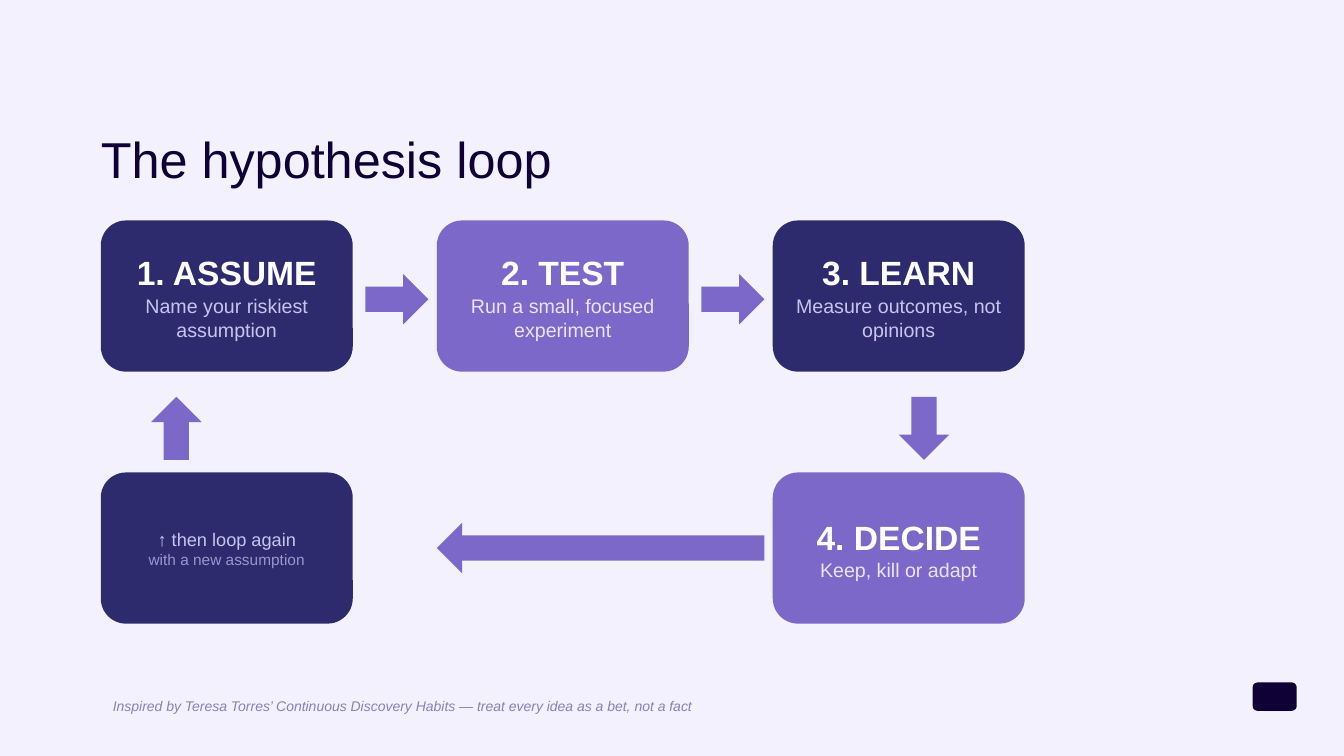
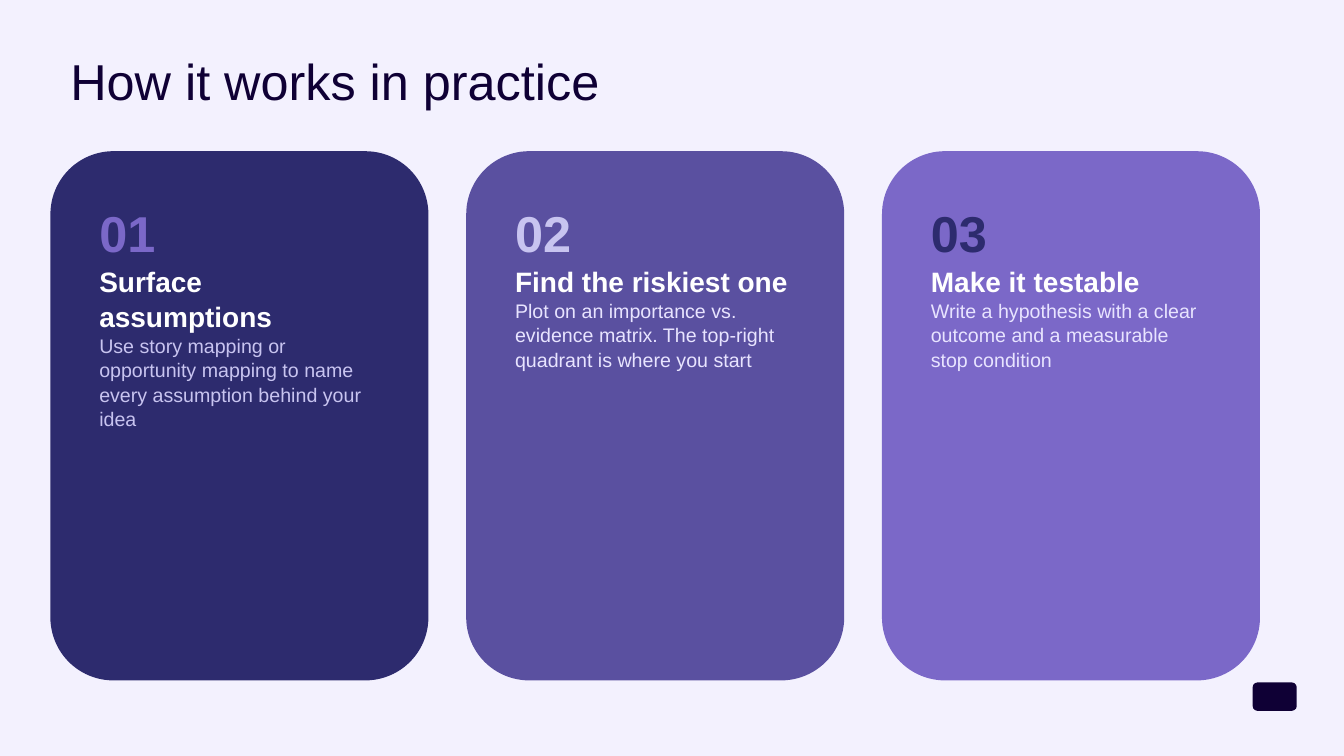
from pptx import Presentation
from pptx.dml.color import RGBColor
from pptx.enum.shapes import MSO_SHAPE
from pptx.enum.text import MSO_ANCHOR, PP_ALIGN
from pptx.util import Emu, Pt

PX = 9525
FONT = "Arial"
INK, PAPER, WHITE = "0F0035", "F3F1FE", "FFFFFF"
NAVY, INDIGO, VIOLET = "2D2B6E", "5A50A0", "7B68C8"
LILAC, PALE, MUTED, NOTE = "C8C4F0", "E8E4FF", "9B96D0", "8880B8"
LINE_SPACING = 1.04

# Loop steps: column, row, fill, then (text, size, colour, bold) lines
STEPS = [
    (0, 0, NAVY, [("1. ASSUME", 24, WHITE, True),
                  ("Name your riskiest assumption", 14, LILAC, False)]),
    (1, 0, VIOLET, [("2. TEST", 24, WHITE, True),
                    ("Run a small, focused experiment", 14, PALE, False)]),
    (2, 0, NAVY, [("3. LEARN", 24, WHITE, True),
                  ("Measure outcomes, not opinions", 14, LILAC, False)]),
    (2, 1, VIOLET, [("4. DECIDE", 24, WHITE, True),
                    ("Keep, kill or adapt", 14, PALE, False)]),
    (0, 1, NAVY, [("↑ then loop again", 13, LILAC, False),
                  ("with a new assumption", 11, MUTED, False)]),
]
STEP_LEFT, STEP_TOP, STEP_WIDTH, STEP_HEIGHT = 96, 210, 240, 144
STEP_PITCH_X, STEP_PITCH_Y = 320, 240
ARROWS = [
    (MSO_SHAPE.RIGHT_ARROW, 348, 261, 60, 48),
    (MSO_SHAPE.RIGHT_ARROW, 668, 261, 60, 48),
    (MSO_SHAPE.DOWN_ARROW, 856, 378, 48, 60),
    (MSO_SHAPE.LEFT_ARROW, 416, 498, 312, 48),
    (MSO_SHAPE.UP_ARROW, 144, 378, 48, 60),
]
SOURCE_NOTE = ("Inspired by Teresa Torres’ Continuous Discovery Habits"
               " — treat every idea as a bet, not a fact")

# Practice cards: fill, number colour, heading, body, body colour
CARDS = [
    (NAVY, VIOLET, "Surface assumptions",
     "Use story mapping or opportunity mapping to name every assumption behind your idea", LILAC),
    (INDIGO, LILAC, "Find the riskiest one",
     "Plot on an importance vs. evidence matrix. The top-right quadrant is where you start", PALE),
    (VIOLET, NAVY, "Make it testable",
     "Write a hypothesis with a clear outcome and a measurable stop condition", PALE),
]
CARD_LEFT, CARD_TOP, CARD_WIDTH, CARD_HEIGHT, CARD_PITCH = 48, 144, 360, 504, 396
CARD_INSET = 29


def px(length):
    return Emu(length * PX)


def colour(value):
    return RGBColor.from_string(value)


def write(shape, lines, align=PP_ALIGN.LEFT, anchor=MSO_ANCHOR.TOP, inset=None, italic=False):
    """Fill a shape with one paragraph for each (text, size, colour, bold) line."""
    frame = shape.text_frame
    frame.word_wrap = True
    frame.vertical_anchor = anchor
    if inset is not None:
        frame.margin_left = frame.margin_right = px(inset)
        frame.margin_top = frame.margin_bottom = px(inset)
    for index, (text, size, text_colour, bold) in enumerate(lines):
        paragraph = frame.add_paragraph() if index else frame.paragraphs[0]
        paragraph.alignment = align
        paragraph.line_spacing = LINE_SPACING
        run = paragraph.add_run()
        run.text = text
        run.font.name = FONT
        run.font.size = Pt(size)
        run.font.bold = bold
        run.font.italic = italic
        run.font.color.rgb = colour(text_colour)


def add_box(slide, kind, left, top, width, height, fill):
    shape = slide.shapes.add_shape(kind, px(left), px(top), px(width), px(height))
    shape.shadow.inherit = False
    shape.fill.solid()
    shape.fill.fore_color.rgb = colour(fill)
    shape.line.fill.background()
    return shape


def add_text(slide, left, top, width, height, lines, **style):
    box = slide.shapes.add_textbox(px(left), px(top), px(width), px(height))
    write(box, lines, **style)


def add_slide(presentation, title, left, top, width, height):
    """Add a slide with the shared corner mark and title style."""
    slide = presentation.slides.add_slide(presentation.slide_layouts[6])
    slide.background.fill.solid()
    slide.background.fill.fore_color.rgb = colour(PAPER)
    add_box(slide, MSO_SHAPE.ROUNDED_RECTANGLE, 1193, 650, 42, 27, INK)
    add_text(slide, left, top, width, height, [(title, 36, INK, False)],
             anchor=MSO_ANCHOR.BOTTOM, inset=0)
    return slide


def build_loop(presentation):
    slide = add_slide(presentation, "The hypothesis loop", 96, 73, 497, 107)
    for column, row, fill, lines in STEPS:
        step = add_box(slide, MSO_SHAPE.ROUNDED_RECTANGLE,
                       STEP_LEFT + column * STEP_PITCH_X, STEP_TOP + row * STEP_PITCH_Y,
                       STEP_WIDTH, STEP_HEIGHT, fill)
        write(step, lines, align=PP_ALIGN.CENTER, anchor=MSO_ANCHOR.MIDDLE)
    for kind, left, top, width, height in ARROWS:
        add_box(slide, kind, left, top, width, height, VIOLET)
    add_text(slide, 98, 651, 1090, 42, [(SOURCE_NOTE, 10, NOTE, False)],
             anchor=MSO_ANCHOR.MIDDLE, italic=True)


def build_practice(presentation):
    slide = add_slide(presentation, "How it works in practice", 67, 21, 1117, 84)
    for index, (fill, number_colour, heading, body, body_colour) in enumerate(CARDS):
        card = add_box(slide, MSO_SHAPE.ROUNDED_RECTANGLE, CARD_LEFT + index * CARD_PITCH,
                       CARD_TOP, CARD_WIDTH, CARD_HEIGHT, fill)
        write(card, [(f"{index + 1:02d}", 36, number_colour, True),
                     (heading, 20, WHITE, True),
                     (body, 14, body_colour, False)], inset=CARD_INSET)


def main():
    presentation = Presentation()
    presentation.slide_width, presentation.slide_height = px(1280), px(720)
    build_loop(presentation)
    build_practice(presentation)
    presentation.save("out.pptx")


if __name__ == "__main__":
    main()
